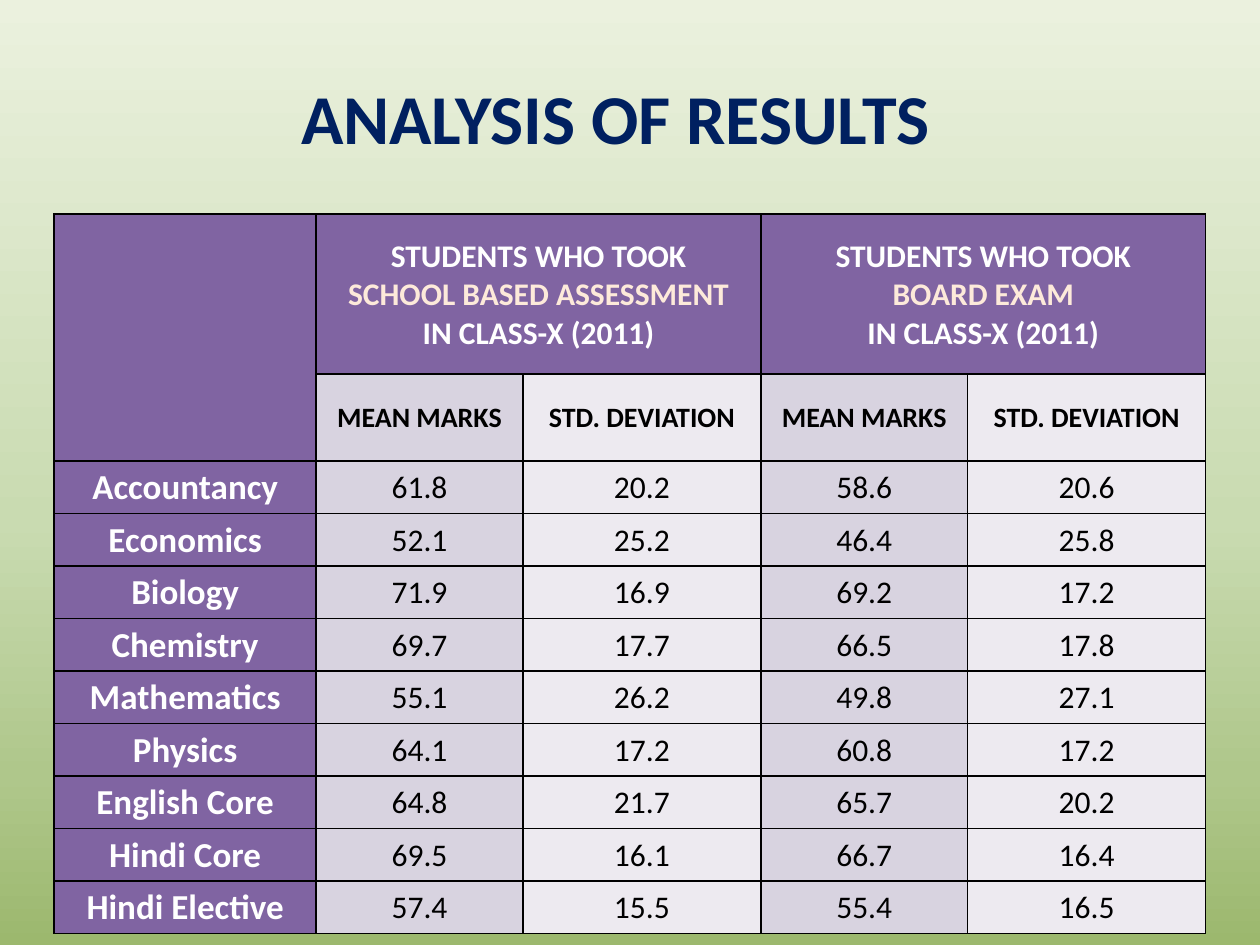
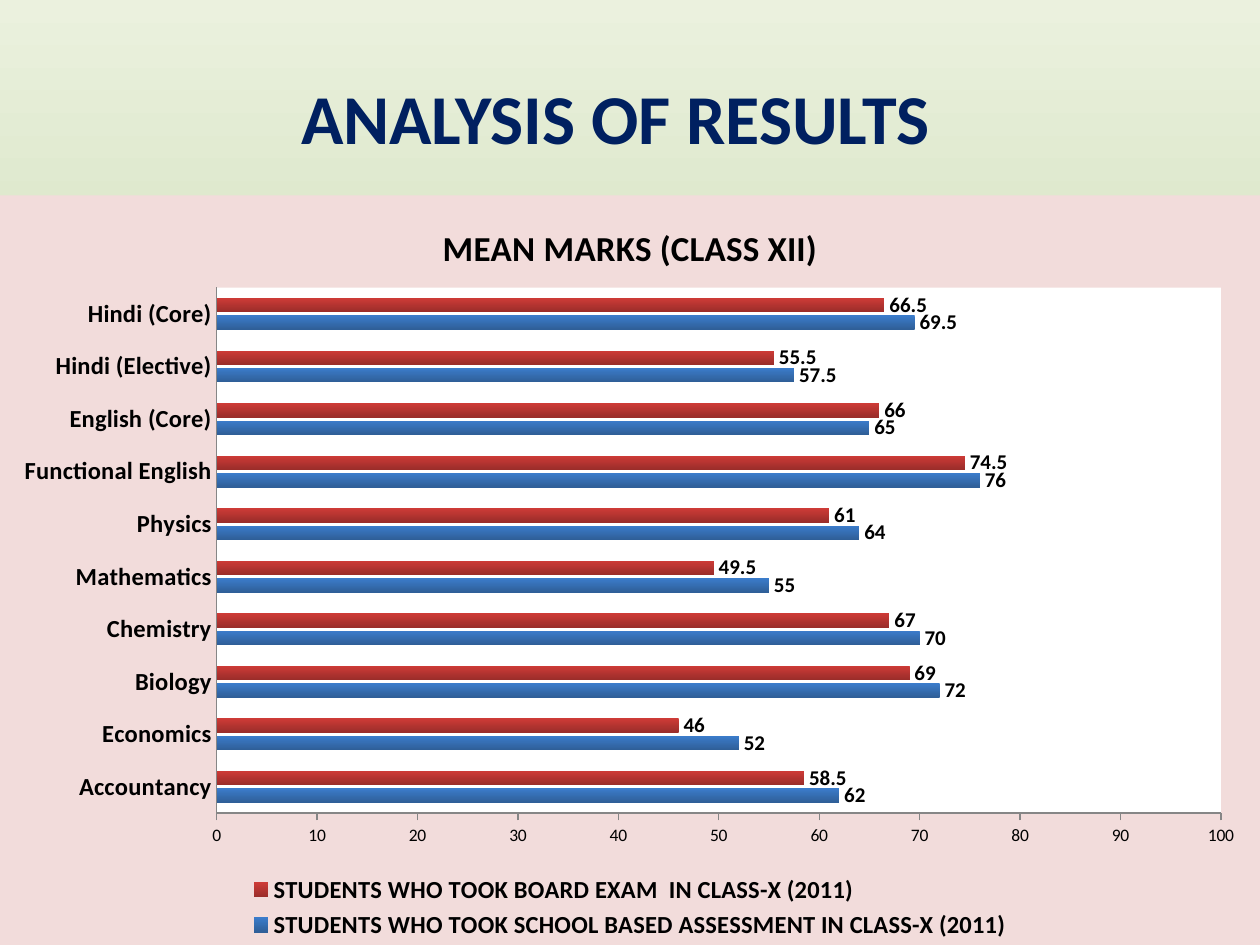
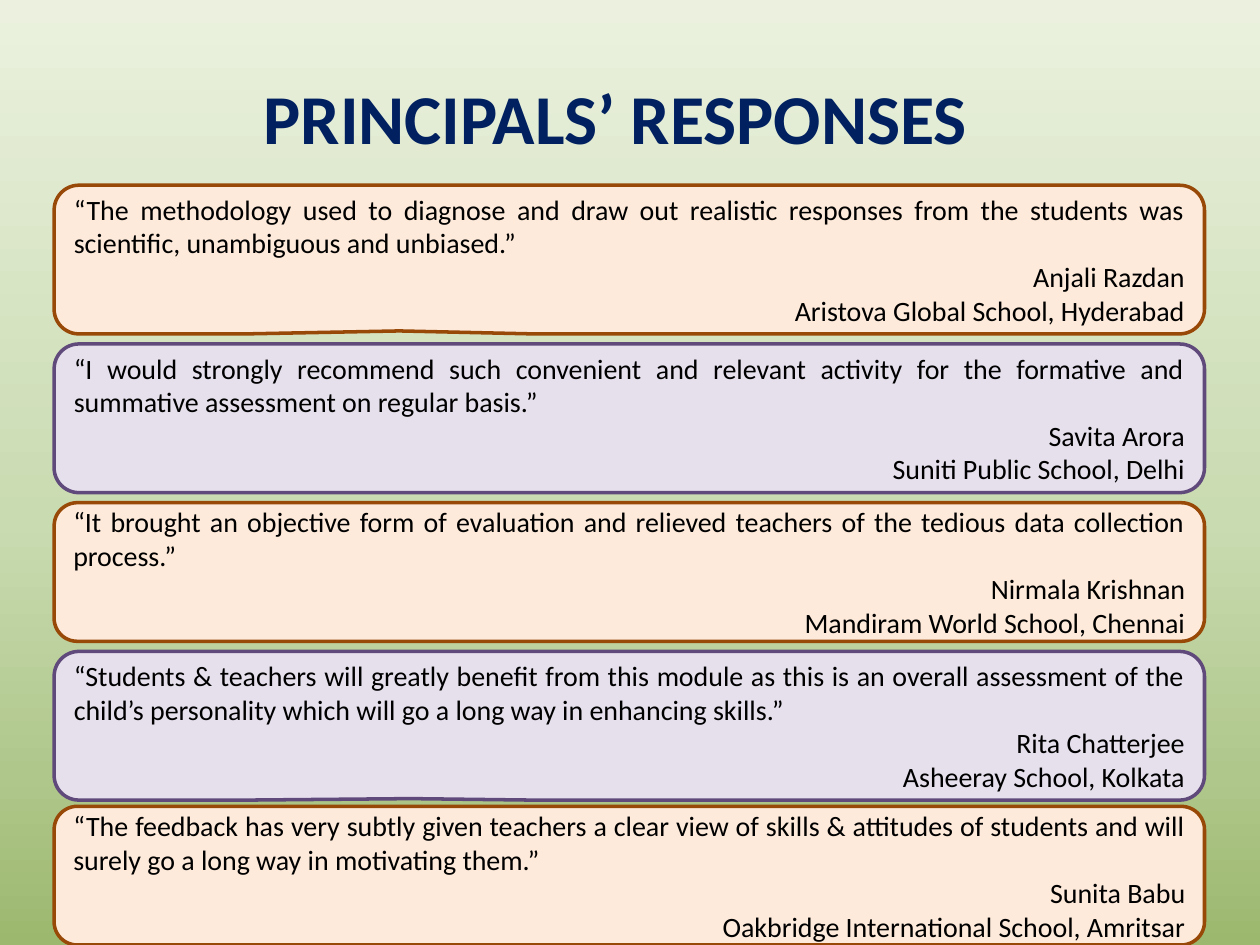
"""Build three slides on examination results and principals' responses."""
from copy import deepcopy

from lxml import etree
from pptx import Presentation
from pptx.chart.data import CategoryChartData
from pptx.dml.color import RGBColor
from pptx.enum.chart import XL_CHART_TYPE, XL_LABEL_POSITION, XL_LEGEND_POSITION, XL_TICK_MARK
from pptx.enum.shapes import MSO_SHAPE
from pptx.enum.text import MSO_ANCHOR, PP_ALIGN
from pptx.oxml import parse_xml
from pptx.oxml.ns import nsdecls, qn
from pptx.util import Inches, Pt

CENTER, RIGHT, JUSTIFY = PP_ALIGN.CENTER, PP_ALIGN.RIGHT, PP_ALIGN.JUSTIFY
MIDDLE = MSO_ANCHOR.MIDDLE
BAR = XL_CHART_TYPE.BAR_CLUSTERED
OUTSIDE_END = XL_LABEL_POSITION.OUTSIDE_END
LEGEND_BOTTOM = XL_LEGEND_POSITION.BOTTOM
TICK_NONE, TICK_OUT = XL_TICK_MARK.NONE, XL_TICK_MARK.OUTSIDE
CALLOUT = MSO_SHAPE.ROUNDED_RECTANGULAR_CALLOUT

FONT = "Calibri"
NAVY = RGBColor(0x00, 0x20, 0x60)
BLACK = RGBColor(0x00, 0x00, 0x00)
WHITE = RGBColor(0xFF, 0xFF, 0xFF)
PURPLE = RGBColor(0x80, 0x64, 0xA2)
LILAC = RGBColor(0xD8, 0xD3, 0xE0)
PALE_LILAC = RGBColor(0xED, 0xEA, 0xF0)
PEACH = RGBColor(0xFD, 0xEA, 0xDA)
BROWN = RGBColor(0x98, 0x48, 0x07)
LAVENDER = RGBColor(0xE6, 0xE0, 0xEC)
VIOLET = RGBColor(0x60, 0x4A, 0x7B)
PINK = RGBColor(0xF2, 0xDC, 0xDB)
GREY = RGBColor(0x86, 0x86, 0x86)
BLUE_BAR = [(0, RGBColor(0x3B, 0x7C, 0xCB)), (1, RGBColor(0x2F, 0x5F, 0x98))]
RED_BAR = [(0, RGBColor(0xCE, 0x3B, 0x37)), (1, RGBColor(0x9B, 0x2D, 0x2A))]
GREEN_BACKGROUND = [
    (0, RGBColor(0xEB, 0xF1, 0xDE)),
    (0.55, RGBColor(0xC9, 0xDB, 0xB1)),
    (0.82, RGBColor(0xAF, 0xC7, 0x8B)),
    (1, RGBColor(0x9C, 0xB8, 0x6E)),
]

RESULTS_TITLE = "ANALYSIS OF RESULTS"
RESPONSES_TITLE = "PRINCIPALS’ RESPONSES"

GROUPS = ["SCHOOL BASED ASSESSMENT", "BOARD EXAM"]
MEASURES = ["MEAN MARKS", "STD. DEVIATION"]
RESULTS = [
    ("Accountancy", "61.8", "20.2", "58.6", "20.6"),
    ("Economics", "52.1", "25.2", "46.4", "25.8"),
    ("Biology", "71.9", "16.9", "69.2", "17.2"),
    ("Chemistry", "69.7", "17.7", "66.5", "17.8"),
    ("Mathematics", "55.1", "26.2", "49.8", "27.1"),
    ("Physics", "64.1", "17.2", "60.8", "17.2"),
    ("English Core", "64.8", "21.7", "65.7", "20.2"),
    ("Hindi Core", "69.5", "16.1", "66.7", "16.4"),
    ("Hindi Elective", "57.4", "15.5", "55.4", "16.5"),
]
COLUMN_WIDTHS = [2.08, 1.64, 1.89, 1.64, 1.89]
HEADER_HEIGHTS = [1.27, 0.69]
SUBJECT_ROWS_HEIGHT = 3.75

CHART_TITLE = "MEAN MARKS (CLASS XII)"
SUBJECTS = ["Accountancy", "Economics", "Biology", "Chemistry", "Mathematics", "Physics",
            "Functional English", "English (Core)", "Hindi (Elective)", "Hindi (Core)"]
MEAN_MARKS = [
    ("STUDENTS WHO TOOK SCHOOL BASED ASSESSMENT IN CLASS-X (2011)",
     [62, 52, 72, 70, 55, 64, 76, 65, 57.5, 69.5], BLUE_BAR),
    ("STUDENTS WHO TOOK BOARD EXAM  IN CLASS-X (2011)",
     [58.5, 46, 69, 67, 49.5, 61, 74.5, 66, 55.5, 66.5], RED_BAR),
]
PLOT_LAYOUT = {"x": 0.172, "y": 0.123, "w": 0.797, "h": 0.701}

RESPONSES = [
    (1.47, 1.18, (-0.2, 0.48),
     "“The methodology used to diagnose and draw out realistic responses from the students was "
     "scientific, unambiguous and unbiased.”",
     "Anjali Razdan", "Aristova Global School, Hyderabad"),
    (2.73, 1.18, (-0.2, 0.5),
     "“I would strongly recommend such convenient and relevant activity for the formative and "
     "summative assessment on regular basis.”",
     "Savita Arora", "Suniti Public School, Delhi"),
    (3.99, 1.1, (-0.2, 0.5),
     "“It brought an objective form of evaluation and relieved teachers of the tedious data "
     "collection process.”",
     "Nirmala Krishnan", "Mandiram World School, Chennai"),
    (5.17, 1.18, (-0.19, 0.49),
     "“Students & teachers will greatly benefit from this module as this is an overall assessment "
     "of the child’s personality which will go a long way in enhancing skills.”",
     "Rita Chatterjee", "Asheeray School, Kolkata"),
    (6.4, 1.1, (-0.2, 0.5),
     "“The feedback has very subtly given teachers a clear view of skills & attitudes of students "
     "and will surely go a long way in motivating them.”",
     "Sunita Babu", "Oakbridge International School, Amritsar"),
]
CALLOUT_COLORS = [(PEACH, BROWN), (LAVENDER, VIOLET)]


def style_font(font, size, color=BLACK, bold=False):
    font.name, font.size, font.bold = FONT, Pt(size), bold
    font.color.rgb = color


def paint_gradient(element, fill, stops):
    fill.gradient()
    fill.gradient_angle = 270
    stop_list = element.find(".//" + qn("a:gsLst"))
    while len(stop_list) < len(stops):
        stop_list.append(deepcopy(stop_list[0]))
    for stop, (position, color) in zip(fill.gradient_stops, stops):
        stop.position = position
        stop.color.rgb = color


def write_lines(tf, lines, size, bold=False):
    """Fill a text frame with (text, alignment, colour) lines."""
    tf.text = "\n".join(text for text, _, _ in lines)
    tf.word_wrap = True
    tf.vertical_anchor = MIDDLE
    for p, (_, align, color) in zip(tf.paragraphs, lines):
        p.alignment = align
        for r in p.runs:
            style_font(r.font, size, color, bold)


def add_titled_slide(prs, title):
    s = prs.slides.add_slide(prs.slide_layouts[6])
    box = s.shapes.add_textbox(Inches(0.91), Inches(0.3), Inches(7.95), Inches(1.25))
    write_lines(box.text_frame, [(title, CENTER, NAVY)], 40, True)
    return s


def style_cell(cell, fill, lines=(), size=18, bold=False):
    cell.margin_left = cell.margin_right = cell.margin_top = Inches(0.01)
    cell.margin_bottom = 0
    tc_pr = cell._tc.get_or_add_tcPr()
    for side in "LRTB":
        tc_pr.append(parse_xml(
            f'<a:ln{side} {nsdecls("a")} w="12700"><a:solidFill><a:srgbClr val="{BLACK}"/>'
            f'</a:solidFill></a:ln{side}>'))
    cell.fill.solid()
    cell.fill.fore_color.rgb = fill
    if lines:
        write_lines(cell.text_frame, lines, size, bold)
        cell.vertical_anchor = MIDDLE


def add_results_table(s):
    row_height = SUBJECT_ROWS_HEIGHT / len(RESULTS)
    heights = HEADER_HEIGHTS + [row_height] * len(RESULTS)
    table = s.shapes.add_table(len(heights), len(COLUMN_WIDTHS), Inches(0.43), Inches(1.7),
                               Inches(sum(COLUMN_WIDTHS)), Inches(sum(heights))).table
    table.first_row = table.horz_banding = False
    for column, width in zip(table.columns, COLUMN_WIDTHS):
        column.width = Inches(width)
    for row, height in zip(table.rows, heights):
        row.height = Inches(height)

    style_cell(table.cell(0, 0), PURPLE)
    style_cell(table.cell(1, 0), PURPLE)
    table.cell(0, 0).merge(table.cell(1, 0))
    for i, group in enumerate(GROUPS):
        left = 1 + 2 * i
        header = [("STUDENTS WHO TOOK", CENTER, WHITE), (group, CENTER, PEACH),
                  ("IN CLASS-X (2011)", CENTER, WHITE)]
        style_cell(table.cell(0, left), PURPLE, header, 18, True)
        style_cell(table.cell(0, left + 1), PURPLE)
        table.cell(0, left).merge(table.cell(0, left + 1))

    fills = [PURPLE] + [LILAC, PALE_LILAC] * len(GROUPS)
    for c, measure in enumerate(MEASURES * len(GROUPS), 1):
        style_cell(table.cell(1, c), fills[c], [(measure, CENTER, BLACK)], 16, True)
    for r, values in enumerate(RESULTS, len(HEADER_HEIGHTS)):
        for c, value in enumerate(values):
            color, size = (BLACK, 18) if c else (WHITE, 20)
            style_cell(table.cell(r, c), fills[c], [(value, CENTER, color)], size, c == 0)


def solid_area(color):
    return parse_xml(
        f'<c:spPr {nsdecls("c", "a")}><a:solidFill><a:srgbClr val="{color}"/></a:solidFill>'
        '<a:ln><a:noFill/></a:ln></c:spPr>')


def set_plot_layout(plot_area):
    for old in plot_area.findall(qn("c:layout")):
        plot_area.remove(old)
    layout = etree.Element(qn("c:layout"))
    manual = etree.SubElement(layout, qn("c:manualLayout"))
    settings = {"layoutTarget": "inner", "xMode": "edge", "yMode": "edge", **PLOT_LAYOUT}
    for tag, value in settings.items():
        etree.SubElement(manual, qn(f"c:{tag}")).set("val", str(value))
    plot_area.insert(0, layout)


def add_marks_chart(s):
    data = CategoryChartData()
    data.categories = SUBJECTS
    for name, values, _ in MEAN_MARKS:
        data.add_series(name, values)
    chart = s.shapes.add_chart(BAR, 0, Inches(1.55), Inches(10), Inches(5.95), data).chart
    style_font(chart.font, 10)
    chart.has_title = True
    chart.chart_title.text_frame.text = CHART_TITLE
    style_font(chart.chart_title.text_frame.paragraphs[0].runs[0].font, 20, bold=True)
    chart.has_legend = True
    chart.legend.position = LEGEND_BOTTOM
    chart.legend.include_in_layout = False
    style_font(chart.legend.font, 14, bold=True)

    subjects, marks = chart.category_axis, chart.value_axis
    subjects.major_tick_mark = TICK_NONE
    style_font(subjects.tick_labels.font, 14, bold=True)
    marks.minimum_scale, marks.maximum_scale, marks.major_unit = 0, 100, 10
    marks.major_tick_mark = TICK_OUT
    marks.has_major_gridlines = False
    for axis in (subjects, marks):
        axis.format.line.color.rgb = GREY

    plot = chart.plots[0]
    plot.gap_width, plot.overlap, plot.vary_by_categories = 150, -25, False
    for series, (_, _, stops) in zip(plot.series, MEAN_MARKS):
        paint_gradient(series._element, series.format.fill, stops)
        labels = series.data_labels
        labels.show_value = True
        labels.position = OUTSIDE_END
        style_font(labels.font, 12, bold=True)

    chart_element = chart._chartSpace.find(qn("c:chart"))
    chart_element.addnext(solid_area(PINK))
    plot_area = chart_element.find(qn("c:plotArea"))
    plot_area.append(solid_area(WHITE))
    set_plot_layout(plot_area)


def add_responses(s):
    for i, (top, height, tail, quote, principal, school) in enumerate(RESPONSES):
        fill, outline = CALLOUT_COLORS[i % len(CALLOUT_COLORS)]
        sp = s.shapes.add_shape(CALLOUT, Inches(0.43), Inches(top), Inches(9.13), Inches(height))
        sp.shadow.inherit = False
        sp.adjustments[0], sp.adjustments[1] = tail
        sp.fill.solid()
        sp.fill.fore_color.rgb = fill
        sp.line.color.rgb = outline
        sp.line.width = Pt(2)
        write_lines(sp.text_frame, [(quote, JUSTIFY, BLACK), (principal, RIGHT, BLACK),
                                    (school, RIGHT, BLACK)], 16)


def main():
    prs = Presentation()
    prs.slide_width, prs.slide_height = Inches(10), Inches(7.5)
    master = prs.slide_master
    paint_gradient(master._element, master.background.fill, GREEN_BACKGROUND)
    add_results_table(add_titled_slide(prs, RESULTS_TITLE))
    add_marks_chart(add_titled_slide(prs, RESULTS_TITLE))
    add_responses(add_titled_slide(prs, RESPONSES_TITLE))
    prs.save("out.pptx")


if __name__ == "__main__":
    main()
